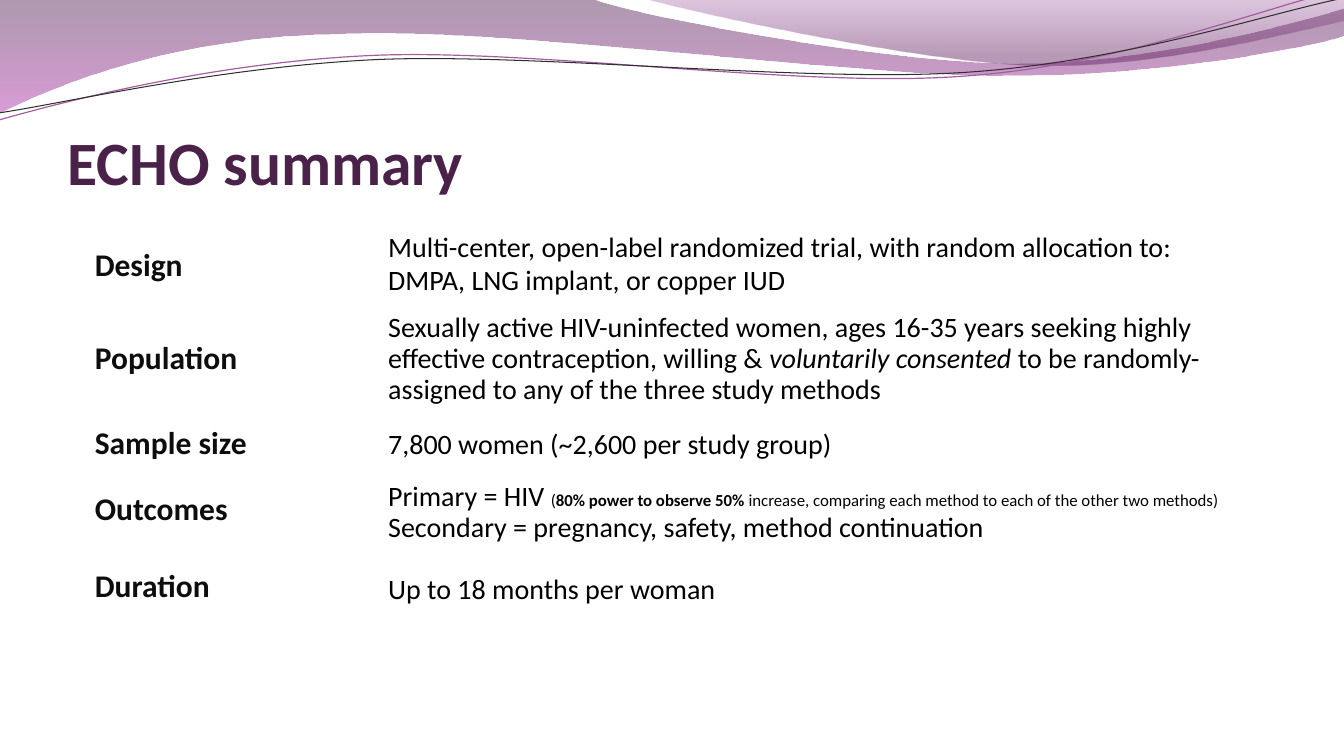
from dataclasses import dataclass
from itertools import islice

from lxml.etree import SubElement
from pptx import Presentation
from pptx.dml.color import RGBColor
from pptx.enum.text import MSO_ANCHOR, MSO_AUTO_SIZE, PP_ALIGN
from pptx.oxml.ns import qn
from pptx.util import Inches, Pt


@dataclass(frozen=True)
class Theme:
    font: str = "Calibri"
    title_color: str = "4A2249"
    label_color: str = "0D0D0D"
    body_color: str = "000000"
    wide_wave: tuple = ((0, "4D1E4C", 45), (1, "BC4BBA", 55))
    right_wave: tuple = ((0, "924591", 30), (0.8, "611F5F", 45))
    purple_line: str = "A35DA2"
    dark_line: str = "2F2F2F"
    title_size: float = 44
    label_size: float = 22.5
    body_size: float = 20
    note_size: float = 12


@dataclass(frozen=True)
class Span:
    text: str
    size: float
    bold: bool = False
    italic: bool = False


@dataclass(frozen=True)
class SummaryRow:
    label: str
    details: list
    height: float
    label_insets: tuple = (0, 0)
    detail_insets: tuple = (0, 0)
    detail_spacing: float = 0.9


THEME = Theme()

WIDE_WAVE = [
    [(0, 0)],
    [(5.87, -0.01)],
    [(6.34, 0.17), (8.84, 0.63), (10.11, 0.63)],
    [(11.37, 0.63), (12.77, 0.26), (13.33, 0.09)],
    [(13.34, 0.36)],
    [(13.11, 0.44), (11.59, 0.76), (9.94, 0.75)],
    [(8.29, 0.75), (5.09, 0.28), (3.43, 0.34)],
    [(1.72, 0.36), (0.61, 0.83), (-0.02, 1.13)],
    [(0, 0)],
]
RIGHT_WAVE = [
    [(6.38, -0.01)],
    [(6.79, 0.11), (9.09, 0.62), (10.25, 0.65)],
    [(11.4, 0.69), (12.82, 0.32), (13.33, 0.21)],
    [(13.33, 0)],
    [(6.38, -0.01)],
]
PURPLE_LINE = [
    [(-0.01, 1.19)],
    [(0.63, 1.01), (2.1, 0.62), (3.69, 0.55)],
    [(5.27, 0.48), (7.89, 0.87), (9.49, 0.76)],
    [(11.1, 0.66), (12.51, 0.08), (13.3, -0.1)],
]
DARK_LINE = [
    [(-0.01, 1.12)],
    [(0.62, 1.03), (2.18, 0.66), (3.77, 0.59)],
    [(5.37, 0.53), (7.96, 0.82), (9.55, 0.72)],
    [(11.14, 0.62), (12.55, 0.14), (13.33, -0.02)],
]


def body(text, italic=False):
    return Span(text, THEME.body_size, italic=italic)


def note(text, bold=False):
    return Span(text, THEME.note_size, bold=bold)


SUMMARY = [
    SummaryRow("Design", [[body(
        "Multi-center, open-label randomized trial, with random allocation to: "
        "DMPA, LNG implant, or copper IUD")]],
        0.73, detail_insets=(0, 0.05), detail_spacing=0.95),
    SummaryRow("Population", [[
        body("Sexually active HIV-uninfected women, ages 16-35 years seeking highly "
             "effective contraception, willing & "),
        body("voluntarily consented", italic=True),
        body(" to be randomly-assigned to any of the three study methods")]], 1.11),
    SummaryRow("Sample size", [[body("7,800 women (~2,600 per study group)")]], 0.59),
    SummaryRow("Outcomes", [
        [body("Primary = HIV "), note("("),
         note("80% power to observe 50% ", bold=True),
         note("increase, comparing each method to each of the other two methods)")],
        [body("Secondary = pregnancy, safety, method continuation")]],
        0.76, label_insets=(0, 0.05)),
    SummaryRow("Duration", [[body("Up to 18 months per woman")]],
               0.73, label_insets=(0.05, 0.05), detail_insets=(0.05, 0)),
]


def bend_segments(shape, segments):
    geometry = next(shape.element.iter(qn("a:path")))
    steps = iter(geometry.findall(qn("a:lnTo")))
    for segment in segments:
        group = list(islice(steps, len(segment)))
        if len(group) == 3:
            curve = geometry.makeelement(qn("a:cubicBezTo"))
            group[0].addprevious(curve)
            for step in group:
                curve.append(step[0])
                geometry.remove(step)


def add_outline(slide, outline, close):
    vertices = [(Inches(x), Inches(y)) for segment in outline for x, y in segment]
    builder = slide.shapes.build_freeform(*vertices[0])
    builder.add_line_segments(vertices[1:], close=close)
    shape = builder.convert_to_shape()
    bend_segments(shape, outline[1:])
    shape.shadow.inherit = False
    return shape


def add_wave(slide, outline, gradient):
    shape = add_outline(slide, outline, close=True)
    shape.line.fill.background()
    shape.fill.gradient()
    shape.fill.gradient_angle = 270
    for stop, (position, color, _) in zip(shape.fill.gradient_stops, gradient):
        stop.position = position
        stop.color.rgb = RGBColor.from_string(color)
    for element, (_, _, opacity) in zip(shape.element.iter(qn("a:srgbClr")), gradient):
        SubElement(element, qn("a:alpha"), val=str(opacity * 1000))


def add_wave_line(slide, outline, color, width):
    shape = add_outline(slide, outline, close=False)
    shape.fill.background()
    shape.line.color.rgb = RGBColor.from_string(color)
    shape.line.width = Pt(width)


def format_font(font, size, color, bold=False, italic=False):
    font.name = THEME.font
    font.size = Pt(size)
    font.bold = bold
    font.italic = italic
    font.color.rgb = RGBColor.from_string(color)


def set_title(slide, text):
    title = slide.shapes.title
    title.left, title.top = Inches(0.67), Inches(0.71)
    title.width, title.height = Inches(12), Inches(1.25)
    frame = title.text_frame
    frame.text = text
    frame.word_wrap = True
    frame.auto_size = MSO_AUTO_SIZE.NONE
    frame.vertical_anchor = MSO_ANCHOR.BOTTOM
    frame.margin_left = frame.margin_right = frame.margin_bottom = 0
    frame.margin_top = Inches(0.05)
    paragraph = frame.paragraphs[0]
    paragraph.alignment = PP_ALIGN.LEFT
    format_font(paragraph.runs[0].font, THEME.title_size, THEME.title_color, bold=True)
    slide.shapes.element.append(title.element)


def fill_cell(cell, paragraphs, color, insets, line_spacing):
    cell.fill.background()
    cell.vertical_anchor = MSO_ANCHOR.MIDDLE
    cell.margin_left = cell.margin_right = Inches(0.07)
    cell.margin_top, cell.margin_bottom = (Inches(inset) for inset in insets)
    frame = cell.text_frame
    for index, spans in enumerate(paragraphs):
        paragraph = frame.add_paragraph() if index else frame.paragraphs[0]
        paragraph.line_spacing = line_spacing
        for span in spans:
            run = paragraph.add_run()
            run.text = span.text
            format_font(run.font, span.size, color, span.bold, span.italic)


def add_summary_table(slide, rows):
    height = sum(row.height for row in rows)
    table = slide.shapes.add_table(len(rows), 2, Inches(0.87), Inches(2.28),
                                   Inches(11.61), Inches(height)).table
    table.first_row = table.horz_banding = False
    for column, width in zip(table.columns, (2.91, 8.7)):
        column.width = Inches(width)
    for index, row in enumerate(rows):
        table.rows[index].height = Inches(row.height)
        label = Span(row.label, THEME.label_size, bold=True)
        fill_cell(table.cell(index, 0), [[label]], THEME.label_color,
                  row.label_insets, 0.85)
        fill_cell(table.cell(index, 1), row.details, THEME.body_color,
                  row.detail_insets, row.detail_spacing)


def main():
    presentation = Presentation()
    presentation.slide_width = Inches(13.33)
    presentation.slide_height = Inches(7.5)
    slide = presentation.slides.add_slide(presentation.slide_layouts[5])
    add_wave(slide, WIDE_WAVE, THEME.wide_wave)
    add_wave(slide, RIGHT_WAVE, THEME.right_wave)
    add_wave_line(slide, PURPLE_LINE, THEME.purple_line, 0.85)
    add_wave_line(slide, DARK_LINE, THEME.dark_line, 0.75)
    set_title(slide, "ECHO summary")
    add_summary_table(slide, SUMMARY)
    presentation.save("out.pptx")


if __name__ == "__main__":
    main()
